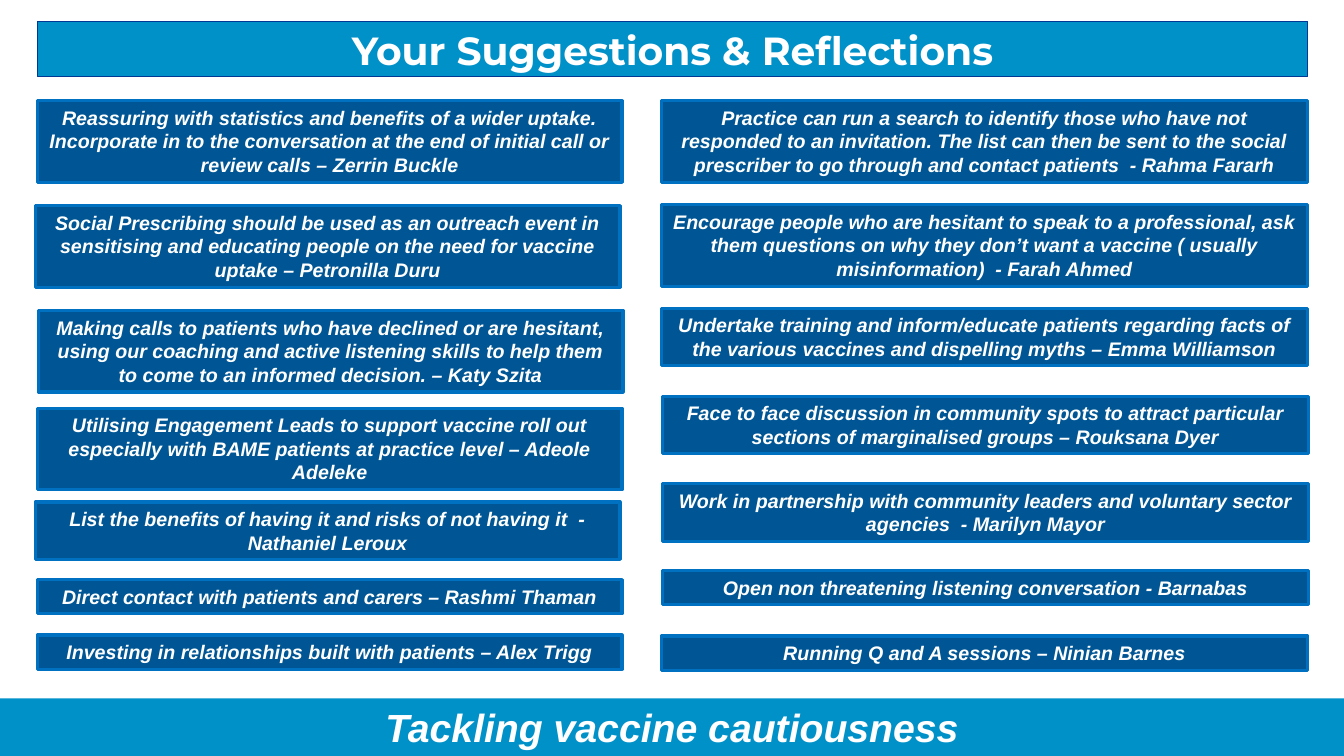
"""Build the slide of suggestions and reflections on vaccine cautiousness."""
import pptx
import pptx.dml.color
import pptx.enum.shapes
import pptx.enum.text
import pptx.util

Inches = pptx.util.Inches
Pt = pptx.util.Pt
RGBColor = pptx.dml.color.RGBColor
RECTANGLE = pptx.enum.shapes.MSO_SHAPE.RECTANGLE
TOP = pptx.enum.text.MSO_ANCHOR.TOP
MIDDLE = pptx.enum.text.MSO_ANCHOR.MIDDLE

WHITE = RGBColor(0xFF, 0xFF, 0xFF)
BRIGHT_BLUE = RGBColor(0x00, 0x91, 0xC9)
NAVY = RGBColor(0x00, 0x38, 0x93)
DEEP_BLUE = RGBColor(0x00, 0x56, 0x94)
BORDER_BLUE = RGBColor(0x00, 0x70, 0xC0)


def write_text(shape, text, size=14, font="Arial", italic=True, anchor=TOP):
    frame = shape.text_frame
    frame.word_wrap = True
    frame.auto_size = pptx.enum.text.MSO_AUTO_SIZE.NONE
    frame.vertical_anchor = anchor
    frame.margin_left = frame.margin_right = Inches(0.1)
    frame.margin_top = frame.margin_bottom = Inches(0.05)
    paragraph = frame.paragraphs[0]
    paragraph.alignment = pptx.enum.text.PP_ALIGN.CENTER
    run = paragraph.add_run()
    run.text = text
    run.font.name = font
    run.font.size = Pt(size)
    run.font.bold = True
    run.font.italic = italic
    run.font.color.rgb = WHITE


def paint(shape, fill, line=None, width=0):
    shape.fill.solid()
    shape.fill.fore_color.rgb = fill
    if line is None:
        shape.line.fill.background()
    else:
        shape.line.color.rgb = line
        shape.line.width = Pt(width)


presentation = pptx.Presentation()
presentation.slide_width = Inches(13.33)
presentation.slide_height = Inches(7.5)
slide = presentation.slides.add_slide(presentation.slide_layouts[5])

title = slide.shapes.title
title.left, title.top = Inches(0.37), Inches(0.21)
title.width, title.height = Inches(12.6), Inches(0.55)
paint(title, BRIGHT_BLUE, NAVY, 0.75)
write_text(title, "Your Suggestions & Reflections", size=28, font="Montserrat", italic=False)

footer = slide.shapes.add_shape(RECTANGLE, 0, Inches(6.93), Inches(13.33), Inches(0.57))
footer.shadow.inherit = False
paint(footer, BRIGHT_BLUE)
write_text(footer, "Tackling vaccine cautiousness", size=28, anchor=MIDDLE)

HEIGHT_BY_LINES = {1: 0.34, 2: 0.57, 3: 0.81}
LEFT_WIDTH, RIGHT_WIDTH = 5.8, 6.41
left_suggestions = [
    (0.37, 1, 3, "Reassuring with statistics and benefits of a wider uptake. Incorporate in to the "
     "conversation at the end of initial call or review calls – Zerrin Buckle"),
    (0.35, 2.04, 3, "Social Prescribing should be used as an outreach event in sensitising and "
     "educating people on the need for vaccine uptake – Petronilla Duru"),
    (0.38, 3.08, 3, "Making calls to patients who have declined or are hesitant, using our coaching "
     "and active listening skills to help them to come to an informed decision. – Katy Szita"),
    (0.37, 4.05, 3, "Utilising Engagement Leads to support vaccine roll out especially with BAME "
     "patients at practice level – Adeole Adeleke"),
    (0.35, 4.98, 2, "List the benefits of having it and risks of not having it  - Nathaniel Leroux"),
    (0.37, 5.75, 1, "Direct contact with patients and carers – Rashmi Thaman"),
    (0.37, 6.3, 1, "Investing in relationships built with patients – Alex Trigg"),
]
right_suggestions = [
    (6.56, 1, 3, "Practice can run a search to identify those who have not responded to an invitation. "
     "The list can then be sent to the social prescriber to go through and contact patients  "
     "- Rahma Fararh"),
    (6.56, 2.03, 3, "Encourage people who are hesitant to speak to a professional, ask them questions "
     "on why they don’t want a vaccine ( usually misinformation)  - Farah Ahmed"),
    (6.56, 3.06, 2, "Undertake training and inform/educate patients regarding facts of the various "
     "vaccines and dispelling myths – Emma Williamson"),
    (6.57, 3.93, 2, "Face to face discussion in community spots to attract particular sections of "
     "marginalised groups – Rouksana Dyer"),
    (6.57, 4.8, 2, "Work in partnership with community leaders and voluntary sector agencies  "
     "- Marilyn Mayor"),
    (6.57, 5.66, 1, "Open non threatening listening conversation - Barnabas"),
    (6.56, 6.31, 1, "Running Q and A sessions – Ninian Barnes"),
]

for width, suggestions in ((LEFT_WIDTH, left_suggestions), (RIGHT_WIDTH, right_suggestions)):
    for left, top, lines, text in suggestions:
        box = slide.shapes.add_shape(RECTANGLE, Inches(left), Inches(top),
                                     Inches(width), Inches(HEIGHT_BY_LINES[lines]))
        box.shadow.inherit = False
        paint(box, DEEP_BLUE, BORDER_BLUE, 2.25)
        write_text(box, text)

presentation.save("out.pptx")
